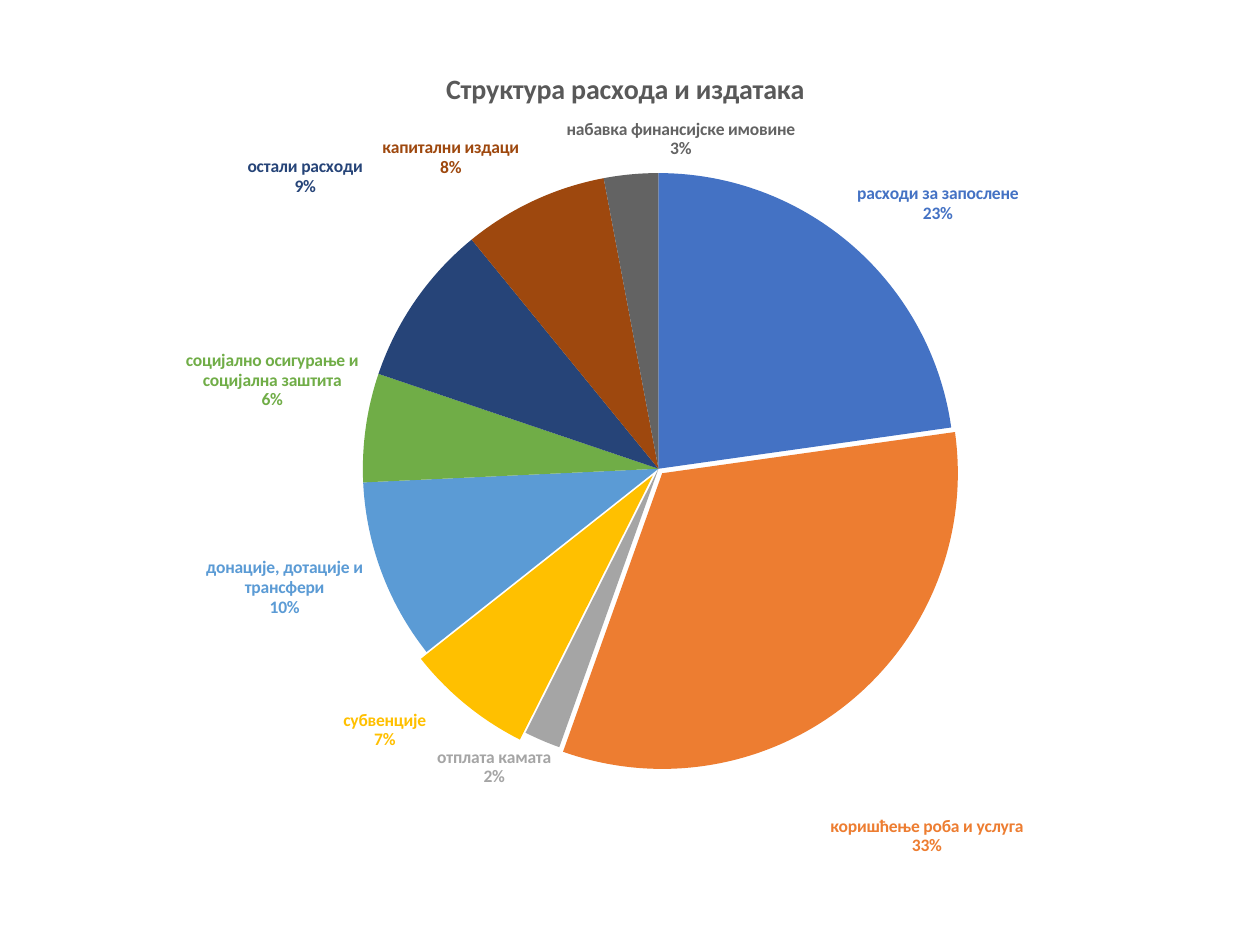
from lxml.etree import SubElement, Element
from pptx import Presentation
from pptx.chart.data import CategoryChartData
from pptx.dml.color import RGBColor
from pptx.enum.chart import XL_CHART_TYPE as ChartType, XL_LABEL_POSITION as LabelPos
from pptx.oxml.ns import qn
from pptx.util import Cm, Pt

FONT = "Calibri"
EXPENSES = [
    ("расходи за запослене", 23, "4472C4", 0, (0, -0.02)),
    ("коришћење роба и услуга", 33, "ED7D31", 2, (-0.02, 0.13)),
    ("отплата камата", 2, "A5A5A5", 0, (0.01, 0)),
    ("субвенције", 7, "FFC000", 3, (-0.03, 0)),
    ("донације, дотације и трансфери", 10, "5B9BD5", 0, (-0.01, -0.02)),
    ("социјално осигурање и социјална заштита", 6, "70AD47", 0, (0, -0.02)),
    ("остали расходи", 9, "264478", 0, (-0.04, -0.12)),
    ("капитални издаци", 8, "9E480E", 0, (-0.01, -0.02)),
    ("набавка финансијске имовине", 3, "636363", 0, (0.14, -0.01)),
]


def rgb(color):
    return RGBColor.from_string(color)


def style_font(font, size, color):
    font.name = FONT
    font.size = Pt(size)
    font.bold = True
    font.color.rgb = rgb(color)


def set_layout(parent, index, **values):
    for old in parent.findall(qn("c:layout")):
        parent.remove(old)
    layout = Element(qn("c:layout"))
    manual = SubElement(layout, qn("c:manualLayout"))
    for name, value in values.items():
        SubElement(manual, qn(f"c:{name}")).set("val", str(value))
    parent.insert(index, layout)


def show_category_and_percent(label):
    for name, shown in (("showVal", "0"), ("showCatName", "1"), ("showPercent", "1")):
        label.find(qn(f"c:{name}")).set("val", shown)
    separator = Element(qn("c:separator"))
    separator.text = "\n"
    label.find(qn("c:showPercent")).getnext().addnext(separator)


def style_slice(point, color):
    point.format.fill.solid()
    point.format.fill.fore_color.rgb = rgb(color)
    point.format.line.fill.background()
    label = point.data_label
    style_font(label.font, 10, color)
    label.position = LabelPos.OUTSIDE_END


def add_expense_pie(slide, left, top, width, height):
    data = CategoryChartData()
    data.categories = [row[0] for row in EXPENSES]
    data.add_series("Series 1", [row[1] for row in EXPENSES])
    chart = slide.shapes.add_chart(
        ChartType.PIE, left, top, width, height, data).chart
    chart.has_legend = False
    chart.font.name = FONT
    chart.font.size = Pt(10)

    chart.has_title = True
    p = chart.chart_title.text_frame.paragraphs[0]
    p.text = "Структура расхода и издатака"
    style_font(p.font, 16, "595959")
    root = chart.element
    set_layout(root.find(".//" + qn("c:title")), 1,
               xMode="edge", yMode="edge", x=0.33, y=0.01)
    set_layout(root.find(".//" + qn("c:plotArea")), 0, layoutTarget="inner",
               xMode="edge", yMode="edge", x=0.11, y=0.14, w=0.81, h=0.71)

    plot = chart.plots[0]
    plot.vary_by_categories = True
    series = plot.series[0]
    for i, (_, _, color, _, _) in enumerate(EXPENSES):
        style_slice(series.points[i], color)

    slices = root.findall(".//" + qn("c:dPt"))
    labels = root.findall(".//" + qn("c:dLbl"))
    for pt, label, (_, _, _, explosion, (dx, dy)) in zip(slices, labels, EXPENSES):
        if explosion:
            el = Element(qn("c:explosion"))
            el.set("val", str(explosion))
            pt.find(qn("c:spPr")).addprevious(el)
        show_category_and_percent(label)
        set_layout(label, 1, x=dx, y=dy)
    for leader in root.iter(qn("c:showLeaderLines")):
        leader.set("val", "0")


def main():
    prs = Presentation()
    prs.slide_width, prs.slide_height = Cm(25.4), Cm(19.05)
    slide = prs.slides.add_slide(prs.slide_layouts[6])
    add_expense_pie(slide, Cm(1.07), Cm(1.14), Cm(23.7), Cm(16.79))
    prs.save("out.pptx")


if __name__ == "__main__":
    main()
